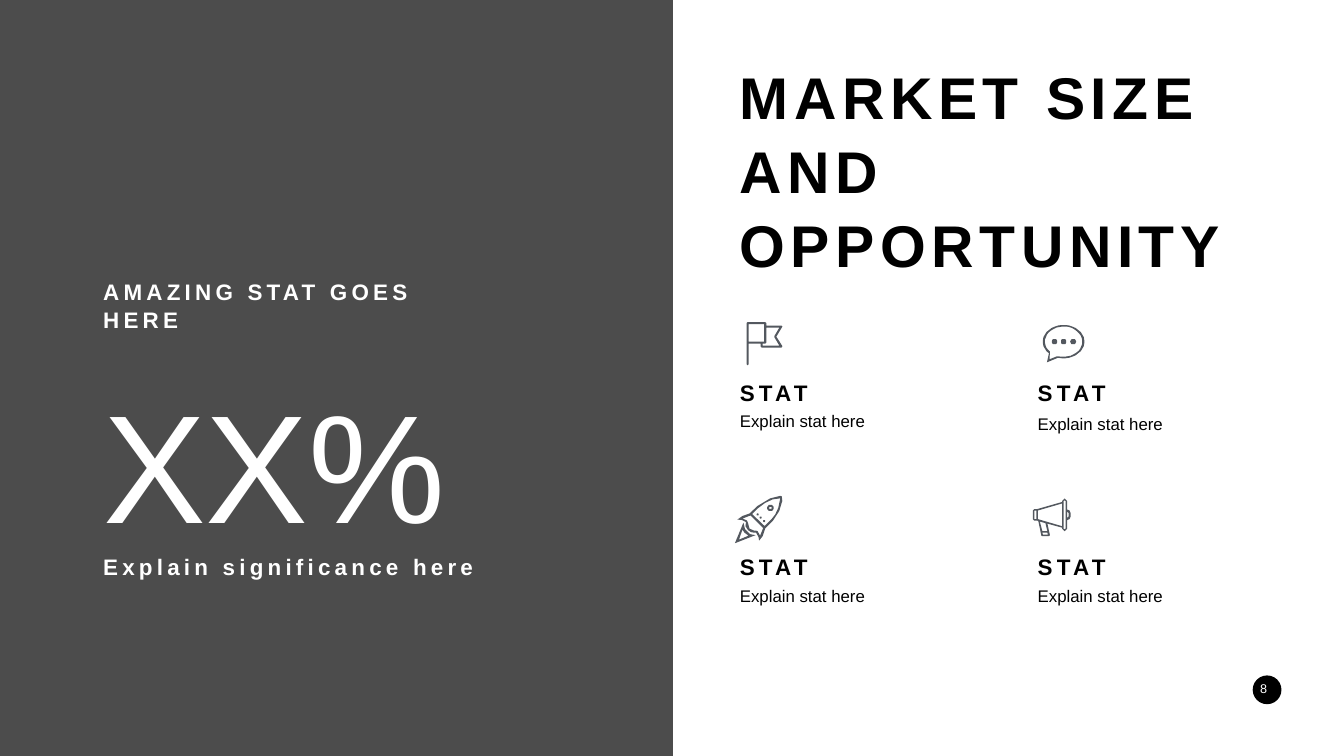
from math import cos, radians, sin

from lxml import etree
from pptx import Presentation
from pptx.dml.color import RGBColor
from pptx.enum.shapes import MSO_SHAPE
from pptx.enum.text import MSO_ANCHOR, MSO_AUTO_SIZE, PP_ALIGN
from pptx.oxml.ns import qn
from pptx.util import Cm, Pt

TOP = MSO_ANCHOR.TOP
FIT_SHAPE = MSO_AUTO_SIZE.SHAPE_TO_FIT_TEXT
LEFT, CENTER = PP_ALIGN.LEFT, PP_ALIGN.CENTER
RECTANGLE, OVAL = MSO_SHAPE.RECTANGLE, MSO_SHAPE.OVAL

COLORS = {"black": "000000", "white": "FFFFFF", "icon": "53585F"}
FONT = "Arial"
TITLE_ONLY = 5
ICON_UNIT = Cm(2.54) / 100  # icon points lie on this fine grid

STAT_LEFTS = (37.03, 52.04)
STAT_TOPS = (18.9, 27.69)


def arc(x, y, radius_x, radius_y, start=0, end=360, step=10):
    """Points along an ellipse, clockwise, angles in degrees."""
    return [(x + radius_x * cos(radians(angle)), y + radius_y * sin(radians(angle)))
            for angle in range(start, end + 1, step)]


def circle(x, y, radius):
    return arc(x, y, radius, radius, step=20)


# Each icon is a list of outlines; an outline inside another cuts a hole
FLAG = [
    [(2, 0), (37, 0), (39, 2), (39, 7), (69, 7), (71, 9), (59, 29), (71, 48), (69, 51),
     (30, 51), (28, 49), (28, 43), (4, 43), (4, 84), (2, 86), (0, 84), (0, 2)],
    [(4, 4), (35, 4), (35, 39), (4, 39)],
    [(32, 47), (32, 43), (37, 43), (39, 41), (39, 11), (65, 11), (55, 28), (55, 30), (65, 47)],
]
BUBBLE = [
    arc(41, 33, 41, 33, 135, 465) + [(30, 65), (8, 74)],
    arc(41, 33, 37, 30, 137, 467) + [(28, 62), (13, 68)],
    *[circle(x, 33, 5.5) for x in (23, 41, 60)],
]
ROCKET = [
    [(93, 1), (90, 0), (70, 5), (45, 20), (29, 35), (15, 40), (5, 47), (14, 48), (22, 52),
     (21, 60), (26, 68), (32, 72), (38, 73), (42, 73), (47, 82), (48, 89), (55, 80),
     (60, 65), (75, 50), (88, 30), (94, 10)],
    [(72, 47), (59, 60), (34, 36), (44, 26), (48, 23), (60, 14), (75, 7), (90, 5),
     (86, 24), (80, 37)],
    [(56, 64), (50, 79), (45, 70), (42, 69), (38, 69), (29, 65), (26, 54), (24, 49),
     (15, 45), (31, 39)],
    [(17, 53), (0, 94), (41, 78), (30, 76), (20, 66)],
    [(8, 87), (15, 67), (19, 73), (27, 79)],
    circle(70.5, 24, 6.5),
    circle(70.5, 24, 2.5),
    *[circle(x, x - 8, 2) for x in (45, 51, 58)],
]
MEGAPHONE = [
    [(68, 22), (68, 5), (63, 0), (58, 5), (58, 7), (9, 21), (3, 21), (0, 24), (0, 41),
     (3, 44), (9, 44), (11, 45), (17, 74), (19, 75), (32, 75), (34, 73), (29, 50), (58, 58),
     (58, 60), (63, 65), (68, 60), (68, 43), (73, 41), (75, 36), (75, 29), (73, 24)],
    [(68, 26), (71, 29), (71, 36), (68, 39)],
    [(61, 5), (63, 4), (65, 5), (65, 60), (63, 61), (61, 60)],
    [(58, 55), (10, 41), (10, 24), (58, 10)],
    [(29, 65), (19, 65), (14, 46), (25, 49)],
    [(30, 72), (20, 72), (19, 68), (29, 68)],
    [(3, 24), (7, 24), (7, 41), (3, 41)],
]

# Icon outlines, icon left and top, gap from heading to explanation
STATS = [
    (FLAG, 37.62, 16.23, 1.63),
    (BUBBLE, 52.55, 16.38, 1.78),
    (ROCKET, 37.03, 24.99, 1.63),
    (MEGAPHONE, 52.04, 25.12, 1.63),
]


def write_text(box, text, size, color="black", bold=False, tracking=0, align=LEFT, wrap=True):
    """Fill a box with one formatted paragraph; tracking is in points."""
    frame = box.text_frame
    frame.word_wrap = wrap
    frame.auto_size = FIT_SHAPE
    frame.vertical_anchor = TOP
    para = frame.paragraphs[0]
    para.alignment = align
    para.line_spacing = 1.05
    span = para.add_run()
    span.text = text
    span.font.name = FONT
    span.font.size = Pt(size)
    span.font.bold = bold
    span.font.color.rgb = RGBColor.from_string(COLORS[color])
    if tracking:
        span.font._element.set("spc", str(tracking * 100))


def add_text(page, place, text, **style):
    box = page.shapes.add_textbox(*map(Cm, place))
    write_text(box, text, **style)


def paint(shape, color):
    shape.shadow.inherit = False
    shape.fill.solid()
    shape.fill.fore_color.rgb = RGBColor.from_string(COLORS[color])
    shape.line.fill.background()


def add_block(page, kind, place, color, opacity=100):
    block = page.shapes.add_shape(kind, *map(Cm, place))
    paint(block, color)
    if opacity < 100:
        tint = block._element.spPr.find(".//" + qn("a:srgbClr"))
        etree.SubElement(tint, qn("a:alpha"), val=str(opacity * 1000))


def add_icon(page, outlines, left, top):
    first, *others = outlines
    builder = page.shapes.build_freeform(*first[0], scale=ICON_UNIT)
    builder.add_line_segments(first[1:], close=True)
    for outline in others:
        builder.move_to(*outline[0])
        builder.add_line_segments(outline[1:], close=True)
    paint(builder.convert_to_shape(Cm(left), Cm(top)), "icon")


def set_title(page, place, text, **style):
    title = page.shapes.title
    title.left, title.top, title.width, title.height = map(Cm, place)
    write_text(title, text, **style)


def main():
    deck = Presentation()
    deck.slide_width, deck.slide_height = Cm(67.72), Cm(38.1)
    page = deck.slides.add_slide(deck.slide_layouts[TITLE_ONLY])
    heading = {"size": 32, "bold": True, "tracking": 6}

    # Left panel with the main figure
    add_block(page, RECTANGLE, (0, 0, 33.91, 38.1), "black", opacity=70)
    add_text(page, (4.95, 13.82, 17.42, 3), "AMAZING STAT GOES HERE", color="white", **heading)
    add_text(page, (4.95, 18.03, 17.93, 9.65), "XX%", size=220, color="white", wrap=False)
    add_text(page, (4.95, 27.69, 25.6, 1.63), "Explain significance here",
             color="white", **heading)

    # Title and grid of stats
    set_title(page, (37.01, 2.74, 28.3, 11.02), "MARKET SIZE AND OPPORTUNITY",
              size=84, bold=True, tracking=8)
    cells = [(left, top) for top in STAT_TOPS for left in STAT_LEFTS]
    for (left, top), (outlines, icon_left, icon_top, gap) in zip(cells, STATS):
        add_icon(page, outlines, icon_left, icon_top)
        add_text(page, (left, top, 3.96, 1.63), "STAT", wrap=False, **heading)
        add_text(page, (left, top + gap, 12.17, 1.27), "Explain stat here", size=24)

    # Page number
    add_block(page, OVAL, (63.12, 34.04, 1.45, 1.45), "black")
    add_text(page, (62.55, 34.16, 2.24, 1.27), "8", size=18, color="white", align=CENTER)

    deck.save("out.pptx")


if __name__ == "__main__":
    main()
